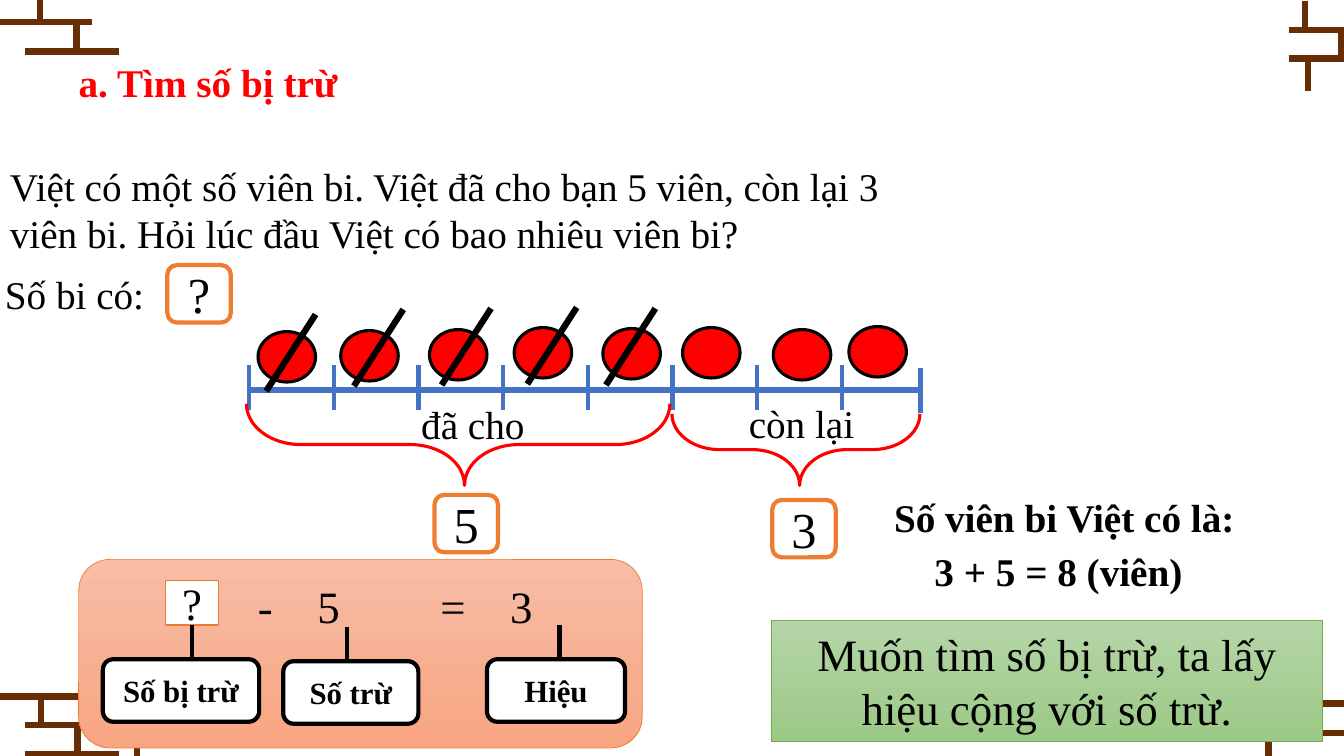
from pptx import Presentation, util as u
from pptx.dml.color import RGBColor
from pptx.enum import shapes, text
from pptx.oxml import parse_xml
from pptx.oxml.ns import nsdecls, qn

# The grid: cells of a tenth of an inch
COLS, ROWS = 133.3, 75
FONT = "Times New Roman"
BROWN, BLUE, ORANGE, RED = "672E05", "4472C4", "ED7D31", "FF0000"
BLACK, WHITE = "000000", "FFFFFF"
KIND, ALIGN, ANCHOR = shapes.MSO_SHAPE, text.PP_ALIGN, text.MSO_ANCHOR


def cell(n):
    return u.Inches(n / 10)


def rgb(code):
    return RGBColor.from_string(code)


def write(frame, words, size=28, color=BLACK, bold=False,
          align=ALIGN.LEFT, anchor=ANCHOR.TOP):
    frame.word_wrap = True
    frame.vertical_anchor = anchor
    par = frame.paragraphs[0]
    par.alignment = align
    run = par.add_run()
    run.text = words
    font = run.font
    font.name, font.size, font.bold = FONT, u.Pt(size), bold
    font.color.rgb = rgb(color)
    return par


def label(page, words, x, y, w, h=5.7, **form):
    box = page.shapes.add_textbox(*map(cell, (x, y, w, h)))
    return write(box.text_frame, words, **form)


def line(page, x1, y1, x2, y2, color, width):
    rule = page.shapes.add_connector(
        shapes.MSO_CONNECTOR.STRAIGHT, *map(cell, (x1, y1, x2, y2)))
    rule.line.color.rgb = rgb(color)
    rule.line.width = u.Pt(width)
    rule._element.spPr.append(parse_xml(f"<a:effectLst {nsdecls('a')}/>"))
    return rule


def shape(page, kind, x, y, w, h, fill, edge, width, words="", **form):
    item = page.shapes.add_shape(kind, *map(cell, (x, y, w, h)))
    item.shadow.inherit = False
    if fill is None:
        item.fill.background()
    elif isinstance(fill, tuple):
        item.fill.gradient()
        item.fill.gradient_angle = 270
        for stop, code, place in zip(item.fill.gradient_stops, fill, (0, 1)):
            stop.color.rgb, stop.position = rgb(code), place
    else:
        item.fill.solid()
        item.fill.fore_color.rgb = rgb(fill)
    item.line.color.rgb = rgb(edge)
    item.line.width = u.Pt(width)
    if words:
        write(item.text_frame, words, align=ALIGN.CENTER,
              anchor=ANCHOR.MIDDLE, **form)
    return item


def number(page, words, x, y):
    shape(page, KIND.ROUNDED_RECTANGLE, x, y, 6.3, 5.7, WHITE, ORANGE, 3,
          words, size=36)


def brace(page, x, y, w, h):
    # The frame is turned a quarter about its centre
    item = shape(page, KIND.LEFT_BRACE, x + (w - h) / 2, y + (h - w) / 2,
                 h, w, None, RED, 2.25)
    item.rotation = 270
    item.adjustments[0], item.adjustments[1] = 0.665, 0.515


def bricks(page):
    # Courses: left, right, height on the slide
    for x1, x2, y in ((0, 9.1, 2.2), (2.5, 11.8, 5.1),
                      (0, 9.2, 69.1), (2.5, 11.8, 71.9), (2.5, 11.8, 74.8),
                      (127.8, COLS, 3), (127.8, COLS, 5.8),
                      (124.3, COLS, 69.8), (124.3, COLS, 72.7)):
        line(page, x1, y, x2, y, BROWN, 4.5)
    # Joints: column, top, bottom
    for x, y1, y2 in ((4, 0, 2.2), (7.6, 2, 5.1),
                      (4.1, 69.1, 72.2), (7.7, 71.9, ROWS), (13.6, 71.9, ROWS),
                      (129.4, 0.1, 3.2), (133, 3, 6), (129.7, 5.5, 9),
                      (125.8, 72.4, ROWS)):
        line(page, x, y1, x, y2, BROWN, 4.5)


def diagram(page):
    # Scale with eight ticks and its end
    for i in range(8):
        x = 24.7 + 8.4 * i
        line(page, x, 36.2, x, 40.7, BLUE, 3)
    line(page, 24.7, 38.7, 91.3, 38.7, BLUE, 4.5)
    line(page, 91.3, 36.5, 91.3, 41, BLUE, 3)

    # Braces and their names
    brace(page, 24.45, 40.05, 42, 8.1)
    label(page, "đã cho", 33.7, 39.2, 26.4, align=ALIGN.CENTER)
    brace(page, 66.65, 41.05, 24.6, 7.1)
    label(page, "còn lại", 66.3, 39.1, 26.4, align=ALIGN.CENTER)

    # Marbles, the given ones struck out
    for x, y in ((25.6, 32.9), (33.8, 32.8), (42.6, 32.7), (51, 32.5),
                 (59.8, 32.6), (67.7, 32.5), (76.7, 32.7), (84.2, 32.4)):
        shape(page, KIND.OVAL, x, y, 5.7, 5, RED, BLACK, 2.25)
    for x, y in ((31.3, 31.2), (40, 30.7), (48.7, 30.6), (57.2, 30.5),
                 (65, 30.6)):
        line(page, x, y, x - 4.9, y + 7.6, BLACK, 4.5)


def sums(page):
    shape(page, KIND.ROUNDED_RECTANGLE, 7.8, 55.5, 55.9, 18.7,
          ("F7BDA5", "F8A582"), ORANGE, 0.5)
    par = label(page, "\t-\t5\t=\t3", 15.7, 56.9, 47.1, 6.4, size=32)
    tabs = parse_xml(f"<a:tabLst {nsdecls('a')}/>")
    for stop in (8.9, 14.8, 27, 33.9):
        tab = tabs.makeelement(qn("a:tab"), {"pos": str(cell(stop)), "algn": "l"})
        tabs.append(tab)
    par._p.get_or_add_pPr().append(tabs)
    blank = shape(page, KIND.RECTANGLE, 16.4, 57.6, 5.3, 4.4, WHITE, ORANGE, 1,
                  "?", size=32)

    # Names of the terms: stem column, box left, top, width
    stems = []
    for words, stem, x, y, w in (("Số bị trừ", 19.05, 10.2, 65.4, 15.5),
                                 ("Số trừ", 34.4, 28.1, 65.6, 13.4),
                                 ("Hiệu", 55.5, 48.3, 65.4, 13.7)):
        stems.append(line(page, stem, y - 3.4, stem, y, BLACK, 3))
        shape(page, KIND.ROUNDED_RECTANGLE, x, y, w, 6.2, WHITE, BLACK, 3,
              words, size=22, bold=True)
    stems[0].begin_connect(blank, 2)


def main():
    deck = Presentation()
    deck.slide_width, deck.slide_height = cell(COLS), cell(ROWS)
    page = deck.slides.add_slide(deck.slide_layouts[5])
    bricks(page)

    # Title and problem
    head = page.shapes.title
    head.left, head.top, head.width, head.height = map(
        cell, (6.8, 5.3, 91.1, 5.7))
    write(head.text_frame, "a. Tìm số bị trừ", color=RED, bold=True)
    label(page, "Việt có một số viên bi. Việt đã cho bạn 5 viên, còn lại 3 "
          "viên bi. Hỏi lúc đầu Việt có bao nhiêu viên bi?",
          0, 15.6, 91.1, 10.4)
    label(page, "Số bi có:", -0.5, 26.3, 91.1)
    for words, x, y in (("?", 16.6, 26.3), ("5", 43.1, 49.1), ("3", 76.6, 49.6)):
        number(page, words, x, y)

    diagram(page)
    sums(page)

    # Rule and answer
    shape(page, KIND.RECTANGLE, 76.5, 61.5, 54.7, 12.1, ("B5D5A7", "9CC987"),
          "70AD47", 0.5, "Muốn tìm số bị trừ, ta lấy hiệu cộng với số trừ.",
          size=32)
    label(page, "Số viên bi Việt có là:", 71.3, 48.4, 68.5, bold=True,
          align=ALIGN.CENTER)
    label(page, "3 + 5 = 8 (viên)", 91.7, 53.8, 41, bold=True)
    deck.save("out.pptx")


if __name__ == "__main__":
    main()
